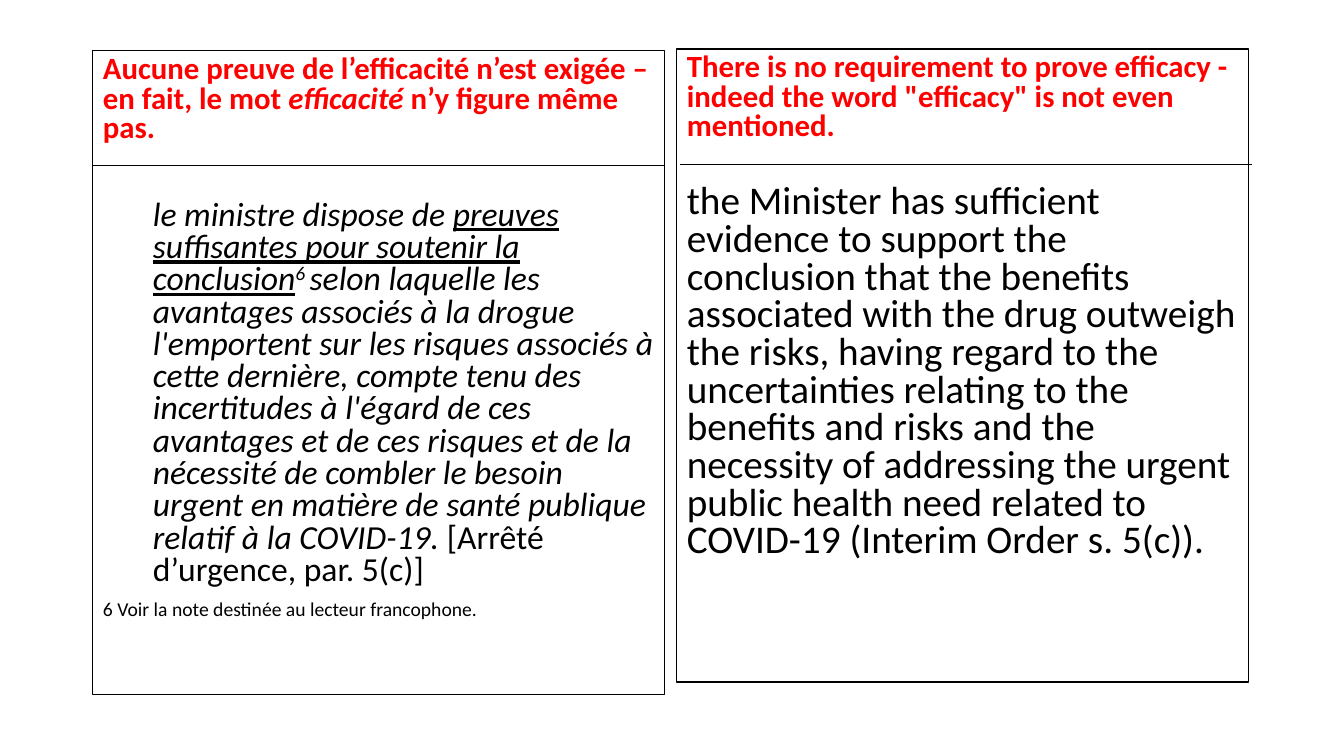
from lxml import etree
from pptx import Presentation, util as u
from pptx.dml.color import RGBColor
from pptx.enum import shapes, text
from pptx.oxml import ns

RED = RGBColor(0xFF, 0x00, 0x00)
BLACK = RGBColor(0x00, 0x00, 0x00)
SCALE = 914400 / 100.8


def px(n):
    return u.Emu(round(n * SCALE))


prs = Presentation()
prs.slide_width, prs.slide_height = px(1344), px(756)
s = prs.slides.add_slide(prs.slide_layouts[6])

heading = {"size": u.Pt(22), "bold": True}
quote = {"size": u.Pt(24), "italic": True}
source = {"size": u.Pt(24)}
note = {"size": u.Pt(14)}
english = {"size": u.Pt(28)}

panels = [
    ((93, 51, 572, 644), [
        (10, 0, RED, [
            ("Aucune preuve de l’efficacité n’est exigée – en fait, le mot ", heading, 0),
            ("efficacité ", {**heading, "italic": True}, 0),
            ("n’y figure même pas.", heading, 0),
        ]),
        (40, 50, BLACK, [
            ("le ministre dispose de ", quote, 0),
            ("preuves suffisantes pour soutenir la conclusion",
             {**quote, "underline": True}, 0),
            ("6 ", quote, 30000),
            ("selon laquelle les avantages associés à la drogue l'emportent sur "
             "les risques associés à cette dernière, compte tenu des incertitudes "
             "à l'égard de ces avantages et de ces risques et de la nécessité de "
             "combler le besoin urgent en matière de santé publique relatif à la "
             "COVID-19.", quote, 0),
            (" [Arrêté d’urgence, par. 5(c)]", source, 0),
        ]),
        (10, 0, BLACK, [
            ("6 Voir la note destinée au lecteur francophone.", note, 0),
        ]),
    ]),
    ((677, 49, 572, 633), [
        (10, 0, RED, [
            ("There is no requirement to prove efficacy - indeed the word "
             "\"efficacy\" is not even mentioned.", heading, 0),
        ]),
        (30, 0, BLACK, [
            ("the Minister has sufficient evidence to support the conclusion that "
             "the benefits associated with the drug outweigh the risks, having "
             "regard to the uncertainties relating to the benefits and risks and "
             "the necessity of addressing the urgent public health need related to "
             "COVID-19 (Interim Order s. 5(c)).", english, 0),
        ]),
    ]),
]

for box, paragraphs in panels:
    sp = s.shapes.add_shape(shapes.MSO_SHAPE.RECTANGLE, *map(px, box))
    sp.shadow.inherit = False
    sp.fill.background()
    sp.line.color.rgb = BLACK
    sp.line.width = u.Pt(0.75)
    tf = sp.text_frame
    tf.word_wrap = True
    tf.vertical_anchor = text.MSO_ANCHOR.TOP
    for i, (before, indent, color, runs) in enumerate(paragraphs):
        p = tf.add_paragraph() if i else tf.paragraphs[0]
        p.alignment = text.PP_ALIGN.LEFT
        p.line_spacing = 0.8
        p.space_before = u.Pt(before)
        p._p.get_or_add_pPr().set("marL", str(px(indent)))
        for words, style, baseline in runs:
            r = p.add_run()
            r.text = words
            r.font.name = "Calibri"
            r.font.color.rgb = color
            for name, value in style.items():
                setattr(r.font, name, value)
            if baseline:
                r.font._element.set("baseline", str(baseline))

for left, right, y in [(680, 1252, 164), (93, 664, 165)]:
    rule = s.shapes.add_connector(
        shapes.MSO_CONNECTOR.STRAIGHT, px(left), px(y), px(right), px(y))
    rule.line.color.rgb = BLACK
    rule.line.width = u.Pt(0.5)
    etree.SubElement(rule._element.spPr, ns.qn("a:effectLst"))

prs.save("out.pptx")
